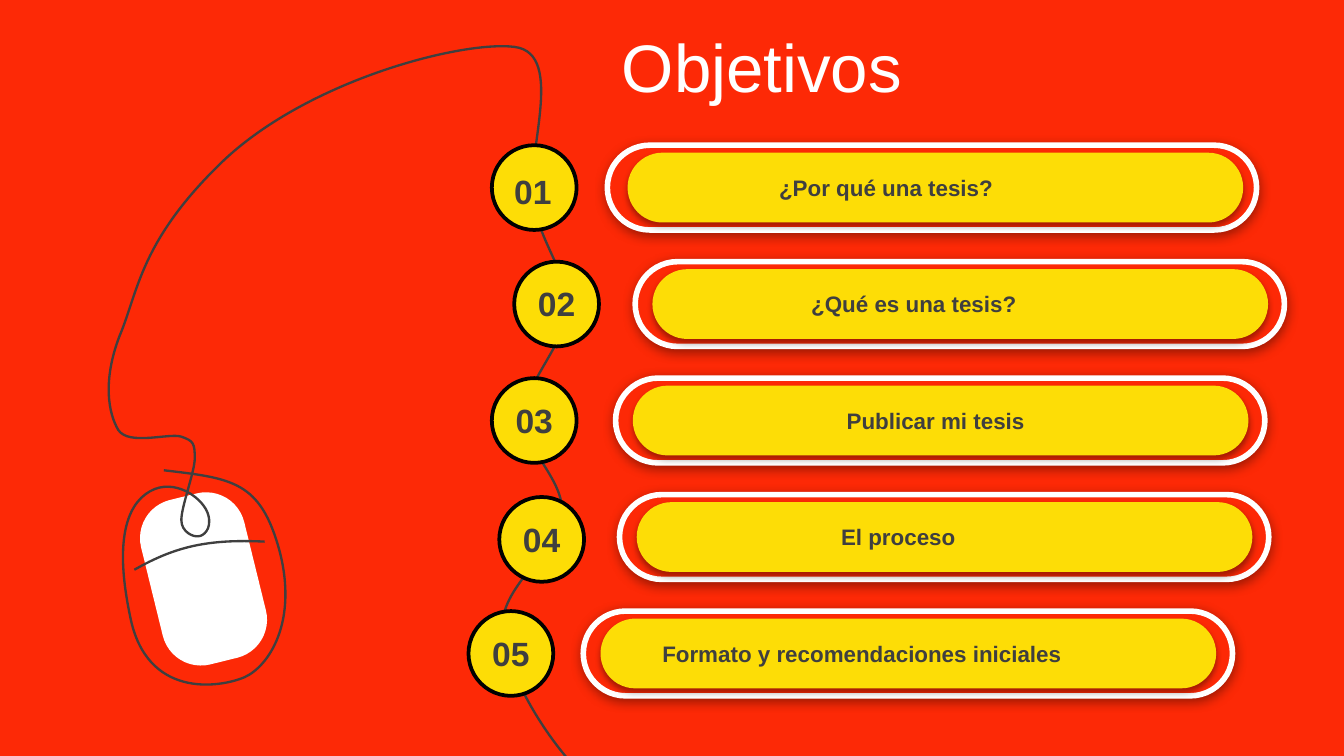
from dataclasses import dataclass

from lxml.etree import SubElement
from pptx import Presentation
from pptx.dml.color import RGBColor
from pptx.enum.shapes import MSO_SHAPE
from pptx.enum.text import MSO_ANCHOR, PP_ALIGN
from pptx.oxml.ns import qn
from pptx.shapes.autoshape import Shape
from pptx.slide import Slide
from pptx.util import Pt

COLORS = {
    "red": "FD2906",
    "yellow": "FDDD06",
    "white": "FFFFFF",
    "black": "000000",
    "gray": "3F3F3F",
}
FONT = "Arial"
TOP, STEP = 77.8, 62.4

Point = tuple[float, float]


@dataclass
class Goal:
    label: str
    circle_x: float
    pill_x: float
    inner_dx: float = 9.2
    label_w: float = 246.2
    circle_dy: float = 0
    number_dx: float = 3.6
    number_dy: float = 7.9


@dataclass
class Shadow:
    alpha: int
    blur: float
    dist: float


GOALS = [
    Goal("¿Por qué una tesis?", 263.5, 325.4, inner_dx=10.8, number_dx=2.9, number_dy=10),
    Goal("¿Qué es una tesis?", 275.5, 340.3),
    Goal("Publicar mi tesis ", 263.5, 329.8, label_w=293.8),
    Goal("El proceso", 267.5, 331.9, circle_dy=1.3),
    Goal("Formato y recomendaciones iniciales", 251, 312.5),
]
OUTER_SHADOW = Shadow(38, 6, 1.6)
INNER_SHADOW = Shadow(35, 3.1, 1.8)

BUTTON_LINE = [(72, 305.3), (93.6, 293), (110.9, 288.7), (141.8, 290.2)]
CABLE = [
    (87.8, 252),
    (124.6, 256.3), (139.7, 257.8), (149.8, 295.2),
    (159.8, 333.4), (144, 357.1), (131, 362.9),
    (117.4, 368.6), (78.5, 374.4), (69.8, 330.5),
    (60.5, 286.6), (69.1, 267.8), (82.8, 262.1),
    (95.8, 257), (109.4, 267.8), (111.6, 275.8),
    (113.8, 283.7), (108.7, 287.3), (106.6, 287.3),
    (103.7, 288), (97.2, 285.1), (97.2, 278.6),
    (97.2, 271.4), (104.4, 252.7), (104.4, 245.5),
    (104.4, 237.6), (103.7, 236.2), (97.2, 234),
    (90.7, 231.8), (69.1, 239), (63.4, 230.4),
    (58.3, 221.8), (54.7, 204.5), (64.1, 180),
    (74.2, 156.2), (74.9, 128.9), (120.2, 85.7),
    (166.3, 42.5), (248.4, 21.6), (275.8, 25.2),
    (303.8, 28.8), (280.8, 85), (285.8, 108.7),
    (290.2, 131.8), (304.6, 146.9), (303.8, 165.6),
    (303.1, 184.3), (281.5, 204.5), (280.8, 222.5),
    (280.1, 241.2), (303.1, 257), (301, 275.8),
    (299.5, 294.5), (269.3, 313.2), (269.3, 334.8),
    (270, 356.4), (287.3, 386.6), (303.8, 406.1),
]


def rgb(name: str) -> RGBColor:
    return RGBColor.from_string(COLORS[name])


def bezier(a: float, b: float, c: float, d: float, t: float) -> float:
    u = 1 - t
    return u**3 * a + 3 * u * u * t * b + 3 * u * t * t * c + t**3 * d


def curve_range(values: list[float]) -> tuple[float, float]:
    reached = [
        bezier(*values[i:i + 4], step / 20)
        for i in range(0, len(values) - 1, 3)
        for step in range(21)
    ]
    return min(reached), max(reached)


def add_curve(s: Slide, knots: list[Point]) -> None:
    left, right = curve_range([x for x, _ in knots])
    top, bottom = curve_range([y for _, y in knots])
    builder = s.shapes.build_freeform(Pt(left), Pt(top))
    builder.add_line_segments([(Pt(right), Pt(bottom))], close=False)
    sp = builder.convert_to_shape()

    path = next(sp._element.iter(qn("a:path")))
    for child in list(path):
        path.remove(child)
    for i in range(0, len(knots), 3):
        tag = "a:cubicBezTo" if i else "a:moveTo"
        segment = SubElement(path, qn(tag))
        for x, y in knots[max(0, i - 2):i + 1]:
            SubElement(segment, qn("a:pt"), x=str(Pt(x - left)), y=str(Pt(y - top)))

    sp.shadow.inherit = False
    sp.fill.background()
    sp.line.color.rgb = rgb("gray")
    sp.line.width = Pt(1.25)


def add_filled(s: Slide, kind: MSO_SHAPE, x: float, y: float, w: float, h: float,
               fill: str, line: str | None = None, line_w: float = 0) -> Shape:
    sp = s.shapes.add_shape(kind, Pt(x), Pt(y), Pt(w), Pt(h))
    sp.shadow.inherit = False
    sp.fill.solid()
    sp.fill.fore_color.rgb = rgb(fill)
    if line:
        sp.line.color.rgb = rgb(line)
        sp.line.width = Pt(line_w)
    else:
        sp.line.fill.background()
    return sp


def add_shadow(sp: Shape, shadow: Shadow) -> None:
    effects = sp._element.spPr.find(qn("a:effectLst"))
    outer = SubElement(effects, qn("a:outerShdw"), blurRad=str(Pt(shadow.blur)),
                       dist=str(Pt(shadow.dist)), dir="5400000", rotWithShape="0")
    color = SubElement(outer, qn("a:srgbClr"), val=COLORS["black"])
    SubElement(color, qn("a:alpha"), val=str(shadow.alpha * 1000))


def add_pill(s: Slide, x: float, y: float, w: float, h: float, fill: str,
             shadow: Shadow, line: str | None = None) -> None:
    sp = add_filled(s, MSO_SHAPE.ROUNDED_RECTANGLE, x, y, w, h, fill, line, 3)
    sp.adjustments[0] = 0.5
    add_shadow(sp, shadow)


def write(sp: Shape, text: str, size: float, color: str, align: PP_ALIGN,
          anchor: MSO_ANCHOR, bold: bool = False) -> None:
    tf = sp.text_frame
    tf.word_wrap = True
    tf.vertical_anchor = anchor
    p = tf.paragraphs[0]
    p.alignment = align
    r = p.add_run()
    r.text = text
    r.font.name = FONT
    r.font.size = Pt(size)
    r.font.bold = bold
    r.font.color.rgb = rgb(color)


def add_text(s: Slide, text: str, x: float, y: float, w: float, h: float,
             size: float, anchor: MSO_ANCHOR) -> None:
    sp = s.shapes.add_textbox(Pt(x), Pt(y), Pt(w), Pt(h))
    write(sp, text, size, "gray", PP_ALIGN.CENTER, anchor, bold=True)


def add_goal(s: Slide, i: int, goal: Goal) -> None:
    y = TOP + i * STEP
    circle_y = y + goal.circle_dy
    add_filled(s, MSO_SHAPE.OVAL, goal.circle_x, circle_y, 45.4, 45.4, "yellow", "black", 2)
    add_text(s, f"{i + 1:02}", goal.circle_x + goal.number_dx, circle_y + goal.number_dy,
             38.2, 28.8, 18, MSO_ANCHOR.MIDDLE)
    add_pill(s, goal.pill_x, y, 347.8, 45.4, "red", OUTER_SHADOW, "white")
    add_pill(s, goal.pill_x + goal.inner_dx, y + 4, 329.8, 37.4, "yellow", INNER_SHADOW)
    add_text(s, goal.label, goal.pill_x + 26.2, y + 11.8, goal.label_w, 21.6,
             12, MSO_ANCHOR.TOP)


def main() -> None:
    prs = Presentation()
    prs.slide_width, prs.slide_height = Pt(720), Pt(405)
    s = prs.slides.add_slide(prs.slide_layouts[5])
    s.background.fill.solid()
    s.background.fill.fore_color.rgb = rgb("red")

    title = s.shapes.title
    title.left, title.top, title.width, title.height = Pt(326), Pt(12.2), Pt(393.8), Pt(45.4)
    write(title, "Objetivos", 36, "white", PP_ALIGN.LEFT, MSO_ANCHOR.MIDDLE)

    mouse = add_filled(s, MSO_SHAPE.ROUNDED_RECTANGLE, 80.6, 264.8, 56.9, 90.7, "white")
    mouse.adjustments[0] = 0.37
    mouse.rotation = 346.2
    add_curve(s, BUTTON_LINE)
    add_curve(s, CABLE)

    for i, goal in enumerate(GOALS):
        add_goal(s, i, goal)
    prs.save("out.pptx")


if __name__ == "__main__":
    main()
